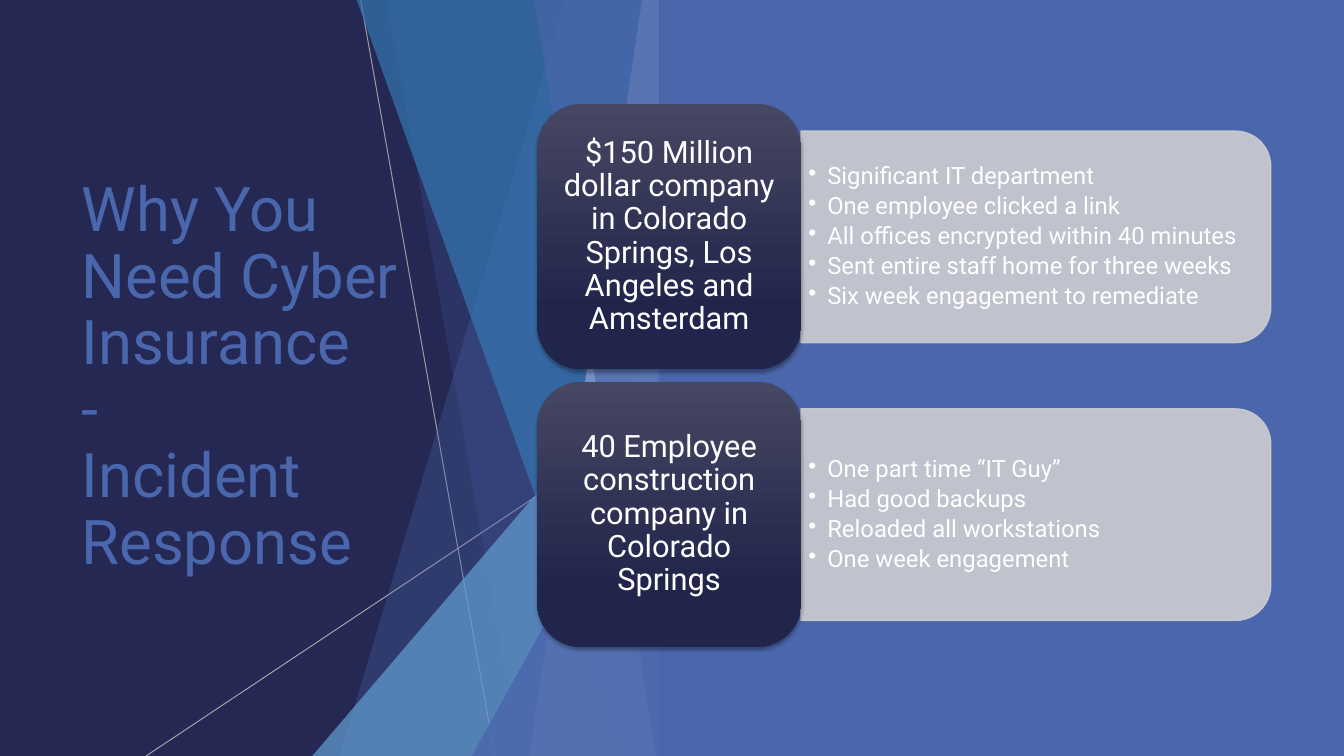
from lxml.etree import SubElement
from pptx import Presentation
from pptx.dml.color import RGBColor
from pptx.enum.shapes import MSO_CONNECTOR, MSO_SHAPE
from pptx.enum.text import MSO_ANCHOR, PP_ALIGN
from pptx.oxml.ns import qn
from pptx.util import Cm, Pt

FONT = "Roboto"
NAVY, BLUE, WHITE = "242852", "4A66AC", "FFFFFF"
WIDTH, HEIGHT = 33.87, 19.05
FACET_RIGHT = 16.92


def colour(hex_text):
    return RGBColor.from_string(hex_text)


def paint(fill, hex_text, opacity=100):
    """Give a shape or line fill a solid colour with an opacity in percent."""
    fill.solid()
    fill.fore_color.rgb = colour(hex_text)
    if opacity < 100:
        solid = fill._xPr.find(qn("a:solidFill"))
        SubElement(solid[0], qn("a:alpha"), val=str(opacity * 1000))


presentation = Presentation()
presentation.slide_width, presentation.slide_height = Cm(WIDTH), Cm(HEIGHT)
slide = presentation.slides.add_slide(presentation.slide_layouts[5])
paint(slide.background.fill, NAVY)
shapes = slide.shapes

# Title
title = shapes.title
title.left, title.top, title.width, title.height = Cm(1.8), Cm(3.84), Cm(9.86), Cm(11.38)
title.text_frame.word_wrap = True
title.text_frame.vertical_anchor = MSO_ANCHOR.MIDDLE
paragraph = title.text_frame.paragraphs[0]
paragraph.alignment = PP_ALIGN.LEFT
paragraph.line_spacing = 0.9
for index, line_text in enumerate(["Why You Need Cyber Insurance", "-", "Incident Response"]):
    if index:
        paragraph.add_line_break()
    run = paragraph.add_run()
    run.text = line_text
    run.font.name, run.font.size = FONT, Pt(44)
    run.font.color.rgb = colour(BLUE)

# Thin lines across the facets: start x, start y, end x, opacity
for start_x, start_y, end_x, opacity in [(9.09, 0, 12.47, 75), (FACET_RIGHT, 10.24, 3.68, 80)]:
    line = shapes.add_connector(
        MSO_CONNECTOR.STRAIGHT, Cm(start_x), Cm(start_y), Cm(end_x), Cm(HEIGHT))
    paint(line.line.fill, "BFBFBF", opacity)
    line.line.width = Pt(0.75)
    SubElement(line._element.spPr, qn("a:effectLst"))

# Facets share a right edge: top x, top y, bottom x, colour, opacity
facets = [
    (14.25, 0, 8.56, BLUE, 30),
    (9.75, 0, 13.11, BLUE, 20),
    (FACET_RIGHT, 8.46, 7.87, "629DD1", 72),
    (8.99, 0, 15.85, "3477B2", 70),
    (16.18, 0, 13.34, "90A2CF", 70),
    (13.46, 0, 16.54, BLUE, 65),
    (FACET_RIGHT, 9.98, 11.89, BLUE, 80),
]
for top_x, top_y, bottom_x, facet_colour, opacity in facets:
    if top_x == FACET_RIGHT:
        facet = shapes.add_shape(
            MSO_SHAPE.ISOSCELES_TRIANGLE, Cm(bottom_x), Cm(top_y),
            Cm(FACET_RIGHT - bottom_x), Cm(HEIGHT - top_y))
        facet.adjustments[0] = 1
    else:
        builder = shapes.build_freeform(Cm(top_x), Cm(top_y))
        builder.add_line_segments([
            (Cm(FACET_RIGHT), Cm(top_y)),
            (Cm(FACET_RIGHT), Cm(HEIGHT)),
            (Cm(bottom_x), Cm(HEIGHT)),
        ])
        facet = builder.convert_to_shape()
    paint(facet.fill, facet_colour, opacity)
    facet.line.fill.background()
    facet.shadow.inherit = False

backdrop = shapes.add_shape(
    MSO_SHAPE.RECTANGLE, Cm(16.61), Cm(0), Cm(WIDTH - 16.61), Cm(HEIGHT))
paint(backdrop.fill, BLUE)
backdrop.line.fill.background()
backdrop.shadow.inherit = False

# Each incident: a dark card with a panel of facts beside it
incidents = [
    ("$150 Million dollar company in Colorado Springs, Los Angeles and Amsterdam", [
        "Significant IT department",
        "One employee clicked a link",
        "All offices encrypted within 40 minutes",
        "Sent entire staff home for three weeks",
        "Six week engagement to remediate",
    ]),
    ("40 Employee construction company in Colorado Springs", [
        "One part time “IT Guy”",
        "Had good backups",
        "Reloaded all workstations",
        "One week engagement",
    ]),
]
for row, (company, facts) in enumerate(incidents):
    offset = row * 7

    panel = shapes.add_shape(
        MSO_SHAPE.ROUND_2_SAME_RECTANGLE, Cm(23.44), Cm(0.05 + offset), Cm(5.33), Cm(11.84))
    panel.rotation = 90
    paint(panel.fill, "CDCDD1", 90)
    paint(panel.line.fill, "CDCDD1", 90)
    panel.line.width = Pt(1)
    panel.shadow.inherit = False

    fact_box = shapes.add_textbox(Cm(20.19), Cm(3.56 + offset), Cm(11.58), Cm(4.83))
    frame = fact_box.text_frame
    frame.word_wrap = True
    frame.vertical_anchor = MSO_ANCHOR.MIDDLE
    frame.margin_left = frame.margin_right = Cm(0.18)
    frame.margin_top = frame.margin_bottom = Cm(0.1)
    for index, fact in enumerate(facts):
        paragraph = frame.add_paragraph() if index else frame.paragraphs[0]
        paragraph.level = 1
        properties = paragraph._p.get_or_add_pPr()
        properties.set("marL", str(Cm(0.48)))
        properties.set("indent", str(-Cm(0.48)))
        SubElement(properties, qn("a:buChar"), char="•")
        paragraph.line_spacing = 0.9
        paragraph.space_after = Pt(3)
        paragraph.font.size = Pt(17)
        paragraph.font.color.rgb = colour(WHITE)
        run = paragraph.add_run()
        run.text = fact
        run.font.name, run.font.size = FONT, Pt(17)
        run.font.color.rgb = colour(WHITE)

    card = shapes.add_shape(
        MSO_SHAPE.ROUNDED_RECTANGLE, Cm(13.54), Cm(2.62 + offset), Cm(6.65), Cm(6.68))
    card.fill.gradient()
    card.fill.gradient_angle = 270
    for stop, position, stop_colour in zip(card.fill.gradient_stops, (0, 0.78), ("464762", "21254B")):
        stop.position = position
        stop.color.rgb = colour(stop_colour)
    card.line.fill.background()
    card.shadow.inherit = False
    effects = card._element.spPr.find(qn("a:effectLst"))
    shadow = SubElement(effects, qn("a:outerShdw"), blurRad=str(Pt(3)), dist=str(Pt(2)),
                        dir="5400000", algn="ctr", rotWithShape="0")
    shadow_colour = SubElement(shadow, qn("a:srgbClr"), val="000000")
    SubElement(shadow_colour, qn("a:alpha"), val="35000")

    frame = card.text_frame
    frame.word_wrap = True
    frame.vertical_anchor = MSO_ANCHOR.MIDDLE
    frame.margin_left = frame.margin_right = Cm(0.23)
    frame.margin_top = frame.margin_bottom = Cm(0.13)
    paragraph = frame.paragraphs[0]
    paragraph.alignment = PP_ALIGN.CENTER
    paragraph.line_spacing = 0.9
    run = paragraph.add_run()
    run.text = company
    run.font.name, run.font.size = FONT, Pt(22)
    run.font.color.rgb = colour(WHITE)

presentation.save("out.pptx")
